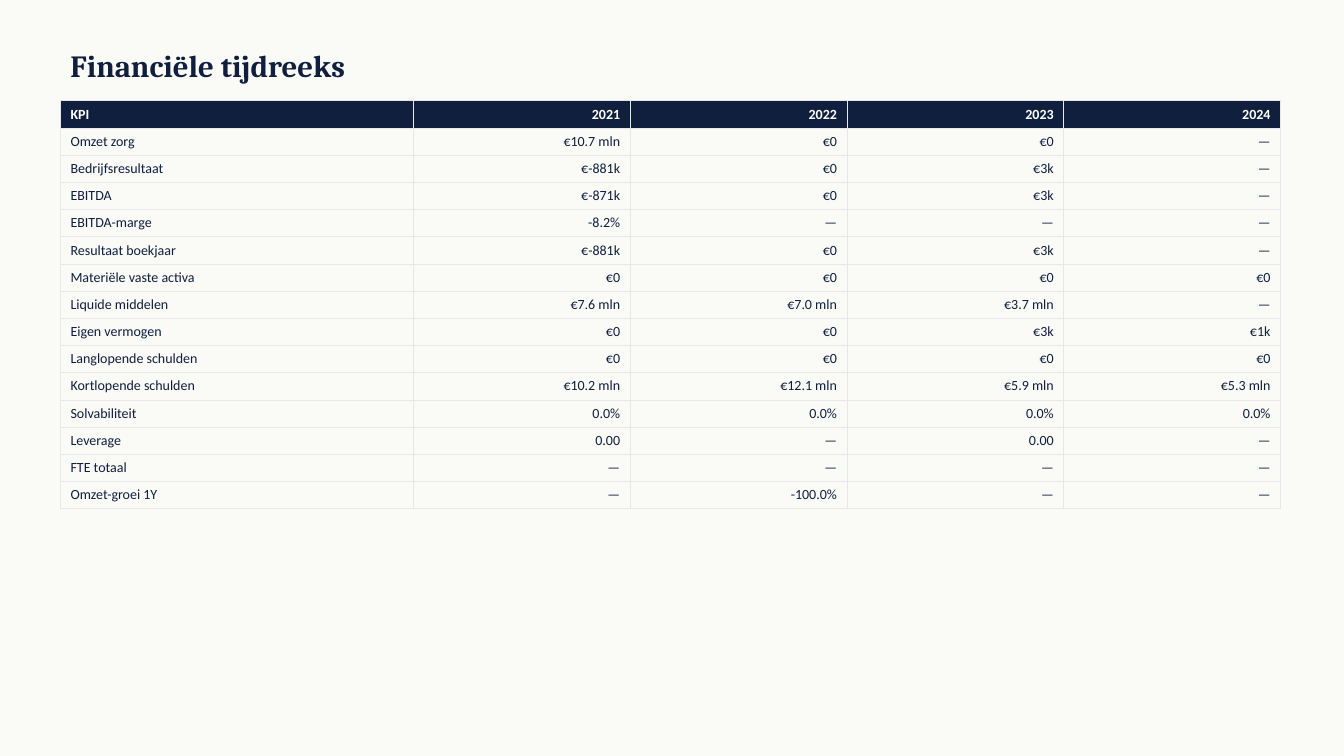
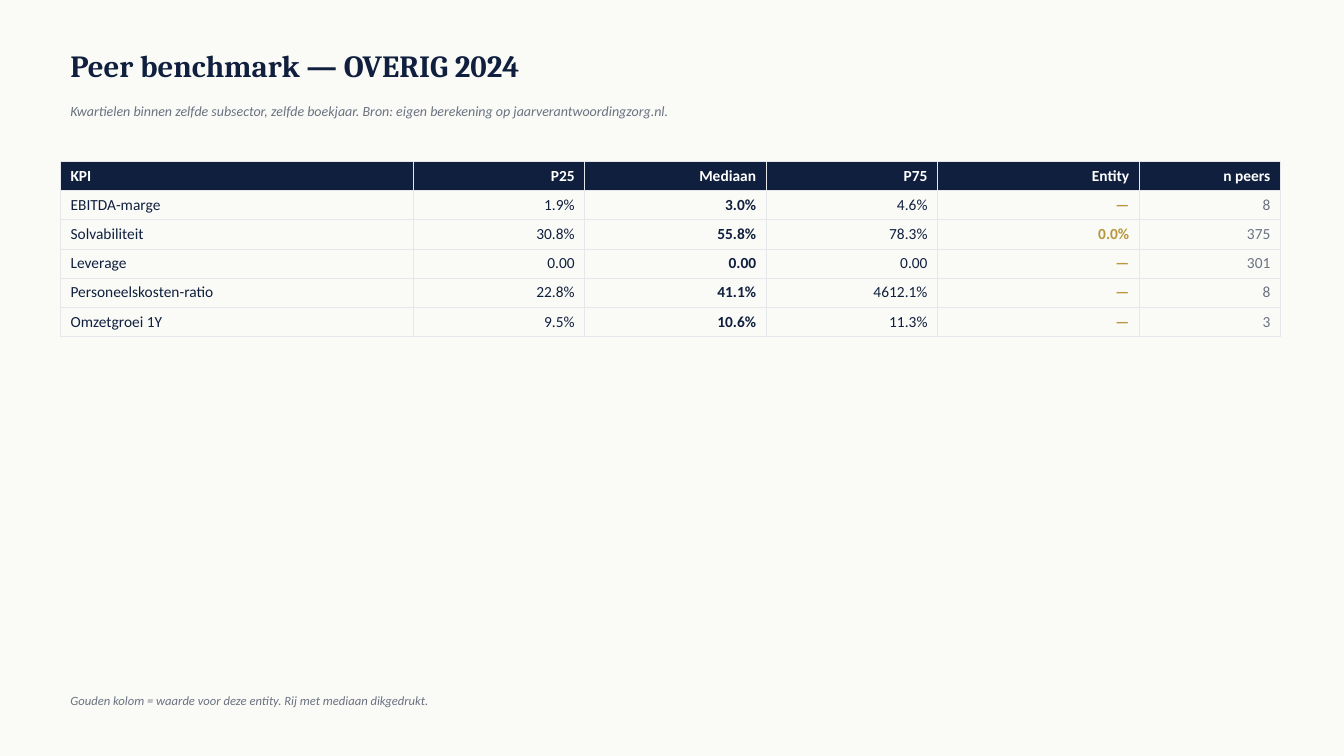
"""Build two slides with financial tables: a time series and a peer benchmark."""
from lxml import etree
from pptx import Presentation
from pptx.dml.color import RGBColor
from pptx.enum.text import MSO_ANCHOR, PP_ALIGN
from pptx.oxml.ns import qn
from pptx.util import Inches, Pt

MIDDLE = MSO_ANCHOR.MIDDLE
LEFT, RIGHT = PP_ALIGN.LEFT, PP_ALIGN.RIGHT

PAPER = RGBColor(0xFA, 0xFA, 0xF7)
NAVY = RGBColor(0x0F, 0x1F, 0x3D)
WHITE = RGBColor(0xFF, 0xFF, 0xFF)
GREY = RGBColor(0x6B, 0x72, 0x80)
GOLD = RGBColor(0xB8, 0x97, 0x3B)
RULE = RGBColor(0xE5, 0xE7, 0xEB)

HEADING_FONT, BODY_FONT = "Cambria", "Calibri"
MARGIN, TEXT_WIDTH = 0.6, 12

SLIDES = [
    {
        "title": "Financiële tijdreeks",
        "notes": [],
        "top": 1,
        "size": 10,
        "row_height": 0.27,
        "widths": [3.5, 2.15, 2.15, 2.15, 2.15],
        "column_styles": {},
        "rows": [
            ("KPI", "2021", "2022", "2023", "2024"),
            ("Omzet zorg", "€10.7 mln", "€0", "€0", "—"),
            ("Bedrijfsresultaat", "€-881k", "€0", "€3k", "—"),
            ("EBITDA", "€-871k", "€0", "€3k", "—"),
            ("EBITDA-marge", "-8.2%", "—", "—", "—"),
            ("Resultaat boekjaar", "€-881k", "€0", "€3k", "—"),
            ("Materiële vaste activa", "€0", "€0", "€0", "€0"),
            ("Liquide middelen", "€7.6 mln", "€7.0 mln", "€3.7 mln", "—"),
            ("Eigen vermogen", "€0", "€0", "€3k", "€1k"),
            ("Langlopende schulden", "€0", "€0", "€0", "€0"),
            ("Kortlopende schulden", "€10.2 mln", "€12.1 mln", "€5.9 mln", "€5.3 mln"),
            ("Solvabiliteit", "0.0%", "0.0%", "0.0%", "0.0%"),
            ("Leverage", "0.00", "—", "0.00", "—"),
            ("FTE totaal", "—", "—", "—", "—"),
            ("Omzet-groei 1Y", "—", "-100.0%", "—", "—"),
        ],
    },
    {
        "title": "Peer benchmark — OVERIG 2024",
        "notes": [
            ("Kwartielen binnen zelfde subsector, zelfde boekjaar. "
             "Bron: eigen berekening op jaarverantwoordingzorg.nl.", 0.95, 10),
            ("Gouden kolom = waarde voor deze entity. Rij met mediaan dikgedrukt.", 6.8, 9),
        ],
        "top": 1.6,
        "size": 11,
        "row_height": 0.29,
        "widths": [3.5, 1.7, 1.8, 1.7, 2, 1.4],
        "column_styles": {2: (NAVY, True), 4: (GOLD, True), 5: (GREY, False)},
        "rows": [
            ("KPI", "P25", "Mediaan", "P75", "Entity", "n peers"),
            ("EBITDA-marge", "1.9%", "3.0%", "4.6%", "—", "8"),
            ("Solvabiliteit", "30.8%", "55.8%", "78.3%", "0.0%", "375"),
            ("Leverage", "0.00", "0.00", "0.00", "—", "301"),
            ("Personeelskosten-ratio", "22.8%", "41.1%", "4612.1%", "—", "8"),
            ("Omzetgroei 1Y", "9.5%", "10.6%", "11.3%", "—", "3"),
        ],
    },
]


def add_run(paragraph, text, font_name, size, color, bold=False, italic=False):
    run = paragraph.add_run()
    run.text = text
    run.font.name = font_name
    run.font.size = Pt(size)
    run.font.color.rgb = color
    run.font.bold = bold
    run.font.italic = italic


def add_line_of_text(slide, text, top, height, *style, **emphasis):
    box = slide.shapes.add_textbox(
        Inches(MARGIN), Inches(top), Inches(TEXT_WIDTH), Inches(height))
    frame = box.text_frame
    frame.word_wrap = True
    frame.vertical_anchor = MIDDLE
    add_run(frame.paragraphs[0], text, *style, **emphasis)


def add_borders(cell):
    properties = cell._tc.get_or_add_tcPr()
    for side in ("a:lnL", "a:lnR", "a:lnT", "a:lnB"):
        line = etree.SubElement(properties, qn(side), w=str(Pt(0.5)))
        fill = etree.SubElement(line, qn("a:solidFill"))
        etree.SubElement(fill, qn("a:srgbClr"), val=str(RULE))


def add_kpi_table(slide, content):
    rows, widths = content["rows"], content["widths"]
    height = content["row_height"]
    table = slide.shapes.add_table(
        len(rows), len(widths), Inches(MARGIN), Inches(content["top"]),
        Inches(sum(widths)), Inches(height * len(rows))).table
    table.horz_banding = False
    for column, width in zip(table.columns, widths):
        column.width = Inches(width)
    for row_index, values in enumerate(rows):
        table.rows[row_index].height = Inches(height)
        for column_index, value in enumerate(values):
            cell = table.cell(row_index, column_index)
            add_borders(cell)
            if row_index == 0:
                cell.fill.solid()
                cell.fill.fore_color.rgb = NAVY
                color, bold = WHITE, True
            else:
                cell.fill.background()
                color, bold = content["column_styles"].get(column_index, (NAVY, False))
            paragraph = cell.text_frame.paragraphs[0]
            paragraph.alignment = RIGHT if column_index else LEFT
            add_run(paragraph, value, BODY_FONT, content["size"], color, bold)


def add_slide(presentation, content):
    slide = presentation.slides.add_slide(presentation.slide_layouts[6])
    slide.background.fill.solid()
    slide.background.fill.fore_color.rgb = PAPER
    add_line_of_text(slide, content["title"], 0.4, 0.5, HEADING_FONT, 22, NAVY, bold=True)
    add_kpi_table(slide, content)
    for text, top, size in content["notes"]:
        add_line_of_text(slide, text, top, 0.3, BODY_FONT, size, GREY, italic=True)


def main():
    presentation = Presentation()
    presentation.slide_width = Inches(13.33)
    presentation.slide_height = Inches(7.5)
    for content in SLIDES:
        add_slide(presentation, content)
    presentation.save("out.pptx")


if __name__ == "__main__":
    main()
